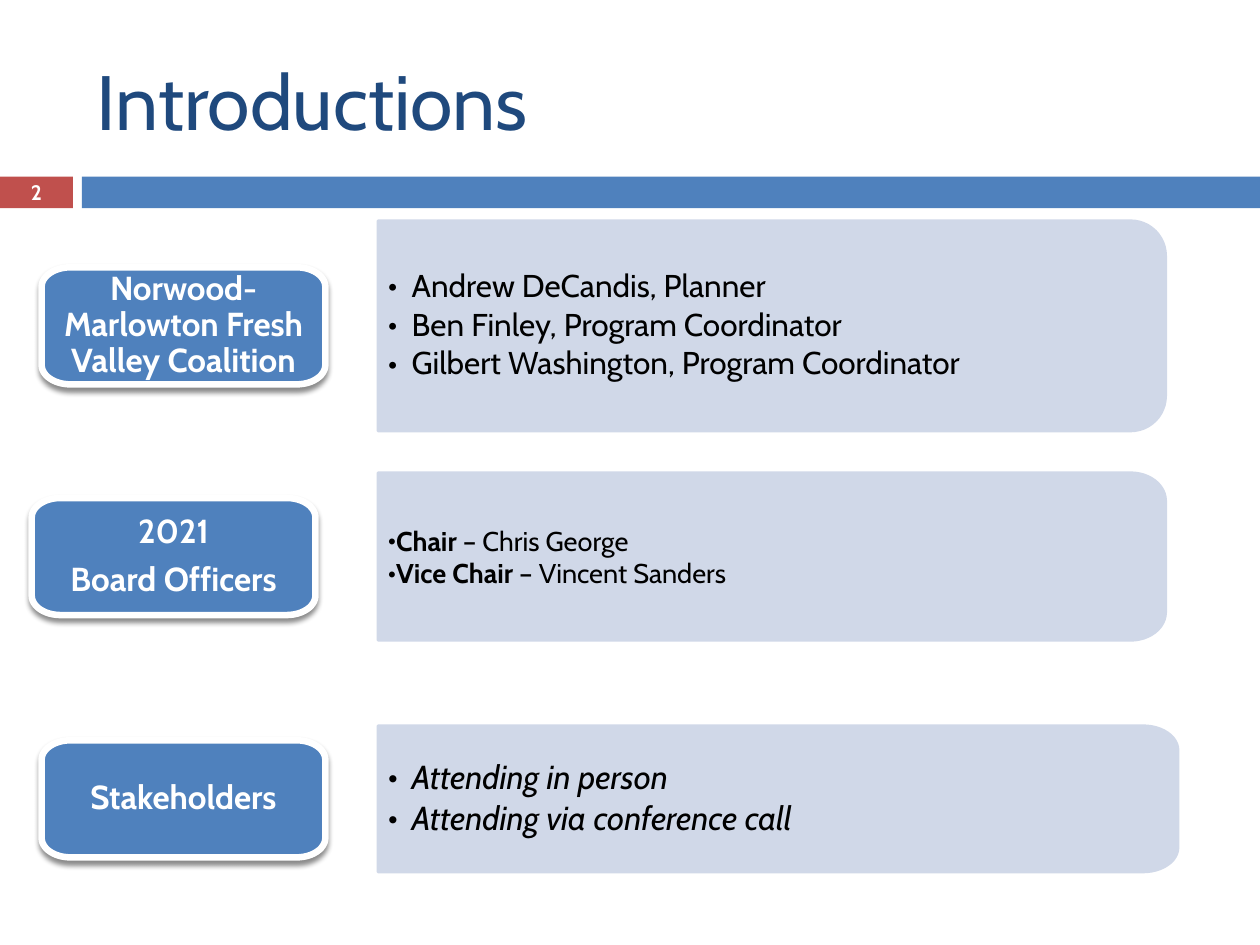
from dataclasses import dataclass
from math import cos, radians, sin

from pptx import Presentation
from pptx import util as u
from pptx.dml.color import RGBColor
from pptx.enum import shapes, text
from pptx.oxml import parse_xml
from pptx.oxml.ns import nsdecls, qn
from pptx.oxml.xmlchemy import OxmlElement


@dataclass(frozen=True)
class Theme:
    font: str = "Cabin"
    navy: str = "1F497D"
    blue: str = "4F81BD"
    red: str = "C0504D"
    pale: str = "D0D8E8"
    white: str = "FFFFFF"
    black: str = "000000"
    title: float = 44
    number: float = 12
    label: float = 19


@dataclass(frozen=True)
class Box:
    left: float
    top: float
    width: float
    height: float

    def lengths(self) -> tuple:
        return u.Cm(self.left), u.Cm(self.top), u.Cm(self.width), u.Cm(self.height)


@dataclass(frozen=True)
class Run:
    text: str
    bold: bool = False
    italic: bool = False


@dataclass(frozen=True)
class Section:
    label: tuple
    label_left: float
    panel: Box
    items: tuple
    size: float
    indent: float = 0.48
    line: float = 0.9
    after: float = 0.15


THEME = Theme()
PANEL_RADIUS = 0.71
LABEL_RADIUS = 0.58
LABEL_WIDTH, LABEL_HEIGHT = 5.72, 2.36
ARC_STEPS = 12

SECTIONS = (
    Section(
        ("Norwood-Marlowton Fresh Valley Coalition",), 0.84,
        Box(7.62, 4.45, 15.88, 4.24),
        ((Run("Andrew DeCandis, Planner"),),
         (Run("Ben Finley, Program Coordinator"),),
         (Run("Gilbert Washington, Program Coordinator"),)),
        18),
    Section(
        ("2021", "Board Officers"), 0.64,
        Box(7.62, 9.53, 15.88, 3.38),
        ((Run("Chair", bold=True), Run(" – Chris George")),
         (Run("Vice Chair ", bold=True), Run("– Vincent Sanders"))),
        15.5, indent=0, line=1, after=0),
    Section(
        ("Stakeholders",), 0.84,
        Box(7.62, 14.63, 16.13, 2.95),
        ((Run("Attending in person", italic=True),),
         (Run("Attending via conference call", italic=True),)),
        19),
)


def rgb(color: str) -> RGBColor:
    return RGBColor.from_string(color)


def paint(sp, fill: str, line: str = "", weight: float = 0) -> None:
    sp.shadow.inherit = False
    sp.fill.solid()
    sp.fill.fore_color.rgb = rgb(fill)
    if line:
        sp.line.color.rgb = rgb(line)
        sp.line.width = u.Pt(weight)
    else:
        sp.line.fill.background()


def add_bar(sl, box: Box, fill: str):
    sp = sl.shapes.add_shape(shapes.MSO_SHAPE.RECTANGLE, *box.lengths())
    paint(sp, fill)
    return sp


def add_rounded(sl, box: Box, radius: float, left_radius: float):
    right, bottom = box.left + box.width, box.top + box.height
    corners = ((right, box.top, -1, 1, -90, radius), (right, bottom, -1, -1, 0, radius),
               (box.left, bottom, 1, -1, 90, left_radius), (box.left, box.top, 1, 1, 180, left_radius))
    points = []
    for x, y, dx, dy, start, rx in corners:
        ry = box.height / 6 if rx else 0
        steps = ARC_STEPS if rx else 0
        for i in range(steps + 1):
            angle = radians(start + 90 * i / ARC_STEPS)
            points.append((u.Cm(x + dx * rx + rx * cos(angle)),
                           u.Cm(y + dy * ry + ry * sin(angle))))
    builder = sl.shapes.build_freeform(*points[0])
    builder.add_line_segments(points[1:], close=True)
    return builder.convert_to_shape()


def set_frame(sp, left: float, top: float, right: float, bottom: float):
    tf = sp.text_frame
    tf.word_wrap = True
    tf.vertical_anchor = text.MSO_ANCHOR.MIDDLE
    tf.margin_left, tf.margin_top = u.Cm(left), u.Cm(top)
    tf.margin_right, tf.margin_bottom = u.Cm(right), u.Cm(bottom)
    return tf


def add_text(p, content: str, *, size: float, color: str, bold: bool = False,
             italic: bool = False, align=text.PP_ALIGN.LEFT) -> None:
    p.alignment = align
    r = p.add_run()
    r.text = content
    r.font.name = THEME.font
    r.font.size = u.Pt(size)
    r.font.color.rgb = rgb(color)
    r.font.bold = bold
    r.font.italic = italic


def paragraphs(tf, count: int) -> list:
    return [tf.paragraphs[0]] + [tf.add_paragraph() for _ in range(count - 1)]


def set_bullet(p, indent: float) -> None:
    pPr = p._p.get_or_add_pPr()
    pPr.set("marL", str(u.Cm(indent)))
    pPr.set("indent", str(-u.Cm(indent)))
    for tag, name, value in (("a:buFont", "typeface", THEME.font), ("a:buChar", "char", "•")):
        bullet = OxmlElement(tag)
        bullet.set(name, value)
        pPr.append(bullet)


def add_panel(sl, section: Section) -> None:
    sp = add_rounded(sl, section.panel, PANEL_RADIUS, 0)
    paint(sp, THEME.pale, THEME.pale, 1.5)
    tf = set_frame(sp, 0.2, 0.25, 0.36, 0.25)
    for p, runs in zip(paragraphs(tf, len(section.items)), section.items):
        p.line_spacing = section.line
        p.space_after = u.Pt(section.after * section.size)
        set_bullet(p, section.indent)
        for run in runs:
            add_text(p, run.text, size=section.size, color=THEME.black,
                     bold=run.bold, italic=run.italic)


def add_label(sl, section: Section) -> None:
    top = section.panel.top + (section.panel.height - LABEL_HEIGHT) / 2
    box = Box(section.label_left, top, LABEL_WIDTH, LABEL_HEIGHT)
    sp = add_rounded(sl, box, LABEL_RADIUS, LABEL_RADIUS)
    paint(sp, THEME.blue, THEME.white, 3.75)
    sp._element.spPr.find(qn("a:effectLst")).append(parse_xml(
        f'<a:outerShdw {nsdecls("a")} blurRad="{u.Pt(3)}" dist="{u.Pt(2.4)}" dir="5400000" rotWithShape="0">'
        f'<a:srgbClr val="{THEME.black}"><a:alpha val="45000"/></a:srgbClr></a:outerShdw>'))
    tf = set_frame(sp, 0.38, 0.28, 0.38, 0.28)
    for p, line in zip(paragraphs(tf, len(section.label)), section.label):
        p.line_spacing = 0.9
        p.space_after = u.Pt(0.35 * THEME.label)
        add_text(p, line, size=THEME.label, color=THEME.white, bold=True,
                 align=text.PP_ALIGN.CENTER)


def main() -> None:
    prs = Presentation()
    prs.slide_width, prs.slide_height = u.Cm(25.4), u.Cm(19.05)
    sl = prs.slides.add_slide(prs.slide_layouts[5])

    title = sl.shapes.title
    title.left, title.top, title.width, title.height = Box(1.7, 0.64, 22.66, 2.74).lengths()
    tf = set_frame(title, 0.25, 0.13, 0.25, 0.13)
    add_text(tf.paragraphs[0], "Introductions", size=THEME.title, color=THEME.navy)

    number = add_bar(sl, Box(0, 3.56, 1.47, 0.64), THEME.red)
    tf = set_frame(number, 0, 0, 0, 0)
    add_text(tf.paragraphs[0], "2", size=THEME.number, color=THEME.white, bold=True,
             align=text.PP_ALIGN.CENTER)
    add_bar(sl, Box(1.65, 3.56, 23.75, 0.64), THEME.blue)

    for section in SECTIONS:
        add_panel(sl, section)
        add_label(sl, section)
    prs.save("out.pptx")


if __name__ == "__main__":
    main()
